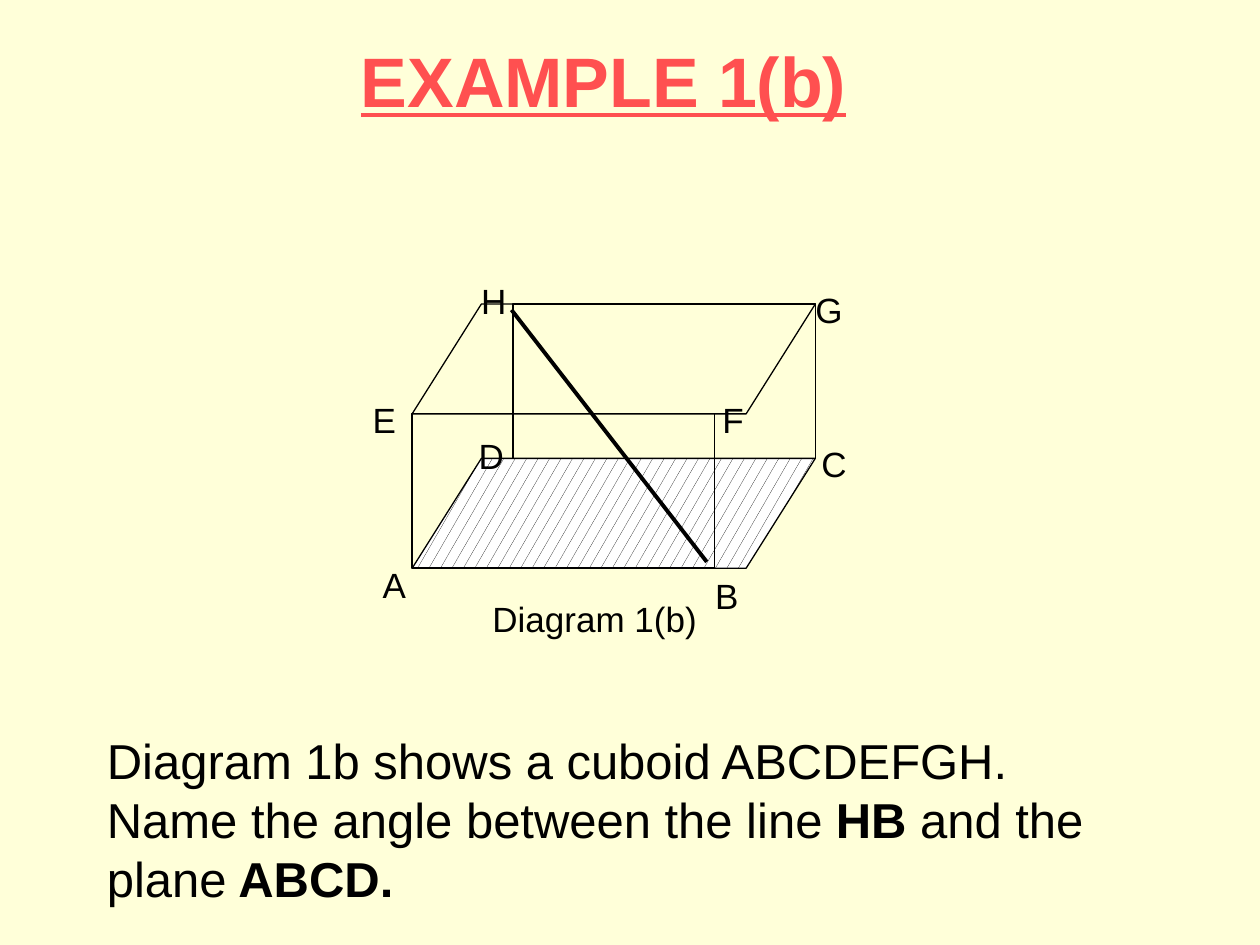
"""Build the cuboid example slide with its labelled diagram and question."""
from lxml.etree import SubElement
from pptx import Presentation
from pptx.dml.color import RGBColor
from pptx.enum.dml import MSO_PATTERN
from pptx.enum.shapes import MSO_CONNECTOR, MSO_SHAPE
from pptx.enum.text import MSO_ANCHOR, PP_ALIGN
from pptx.oxml.ns import qn
from pptx.util import Pt

COLORS = {"background": "FFFFD9", "title": "FF5050", "ink": "000000", "paper": "FFFFFF"}


def color(name):
    return RGBColor.from_string(COLORS[name])


def add_text(runs, left, top, width, height, size=20, ink="ink", underline=False,
             align=PP_ALIGN.CENTER, anchor=MSO_ANCHOR.TOP):
    frame = slide.shapes.add_textbox(Pt(left), Pt(top), Pt(width), Pt(height)).text_frame
    frame.word_wrap = True
    frame.vertical_anchor = anchor
    paragraph = frame.paragraphs[0]
    paragraph.alignment = align
    for text, bold in runs:
        run = paragraph.add_run()
        run.text = text
        run.font.name = "Arial"
        run.font.size = Pt(size)
        run.font.bold = bold
        run.font.underline = underline
        run.font.color.rgb = color(ink)


presentation = Presentation()
presentation.slide_width = Pt(720)
presentation.slide_height = Pt(540)
slide = presentation.slides.add_slide(presentation.slide_layouts[6])
slide.background.fill.solid()
slide.background.fill.fore_color.rgb = color("background")

add_text([("EXAMPLE 1(b)", True)], 77.8, 18, 534.2, 55.4, size=40, ink="title", underline=True)

left, top = 235.5, 173.7
base_width, face_width = 230.4, 172.8
depth, height = 62.8, 88.2
back_left = left + base_width - face_width
faces = [
    (MSO_SHAPE.PARALLELOGRAM, left, top, base_width, depth, False),
    (MSO_SHAPE.RECTANGLE, back_left, top, face_width, height, False),
    (MSO_SHAPE.PARALLELOGRAM, left, top + height, base_width, depth, True),
    (MSO_SHAPE.RECTANGLE, left, top + depth, face_width, height, False),
]
for kind, face_left, face_top, width, face_height, shaded in faces:
    shape = slide.shapes.add_shape(kind, Pt(face_left), Pt(face_top), Pt(width), Pt(face_height))
    shape.shadow.inherit = False
    shape.line.color.rgb = color("ink")
    shape.line.width = Pt(0.75)
    if kind == MSO_SHAPE.PARALLELOGRAM:
        shape.adjustments[0] = 0.63
        shape.rotation = 180
    if shaded:
        shape.fill.patterned()
        shape.fill.pattern = MSO_PATTERN.SMALL_CONFETTI
        shape.fill.fore_color.rgb = color("ink")
        shape.fill.back_color.rgb = color("paper")
    else:
        shape.fill.background()

vertices = {
    "B": (393.8, 324.7), "A": (203.8, 318.2), "C": (455, 249.1), "D": (259.2, 244.8),
    "E": (198, 223.9), "H": (260.6, 156.2), "G": (452.2, 161.3), "F": (397.4, 223.9),
}
for name, (label_left, label_top) in vertices.items():
    add_text([(name, False)], label_left, label_top, 43.2, 25.2)
add_text([("Diagram 1(b)", False)], 270, 337.7, 139.7, 28.8)

diagonal = slide.shapes.add_connector(
    MSO_CONNECTOR.STRAIGHT, Pt(292.3), Pt(177.1), Pt(403.9), Pt(321.1))
diagonal.line.color.rgb = color("ink")
diagonal.line.width = Pt(2.25)
SubElement(diagonal.element.spPr, qn("a:effectLst"))

question = [
    ("Diagram 1b shows a cuboid ABCDEFGH. Name the angle between the line", False),
    (" HB", True), (" and the plane", False), (" ABCD.", True),
]
add_text(question, 54, 414, 594, 108, size=28, align=PP_ALIGN.LEFT, anchor=MSO_ANCHOR.MIDDLE)

presentation.save("out.pptx")
